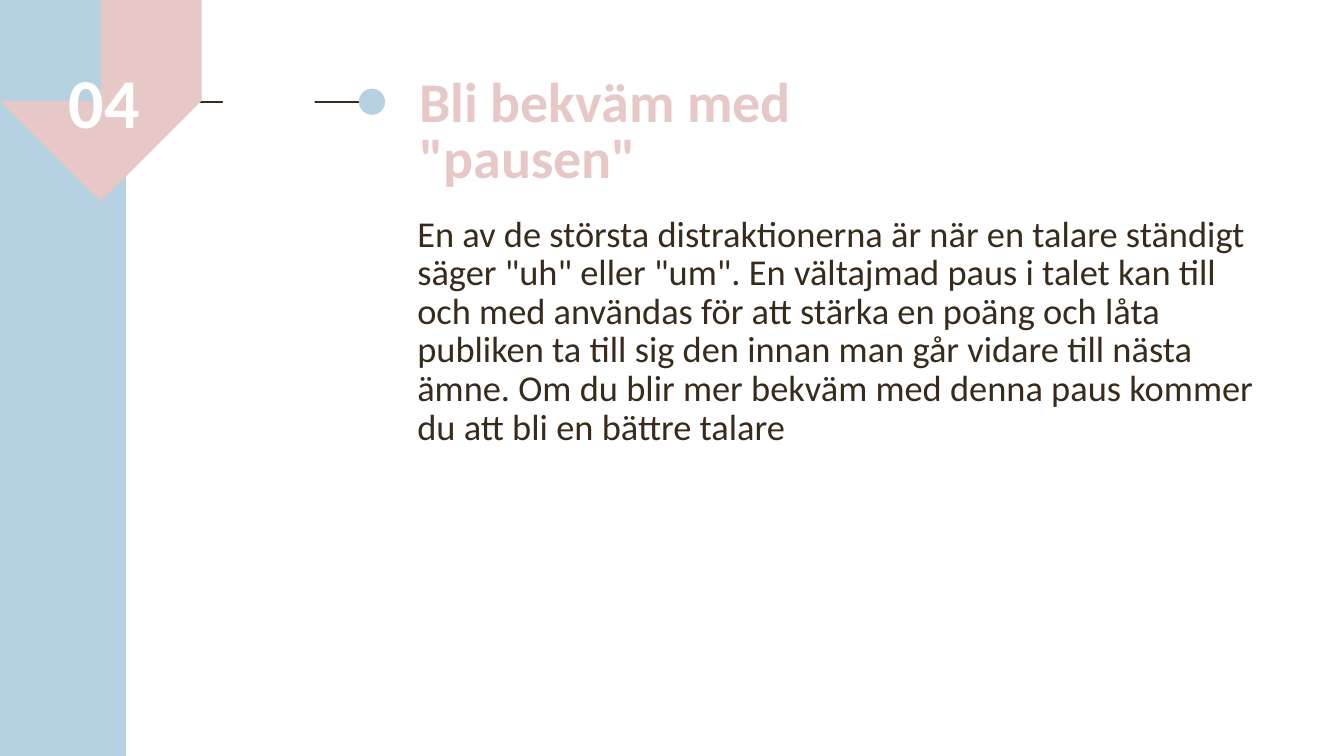
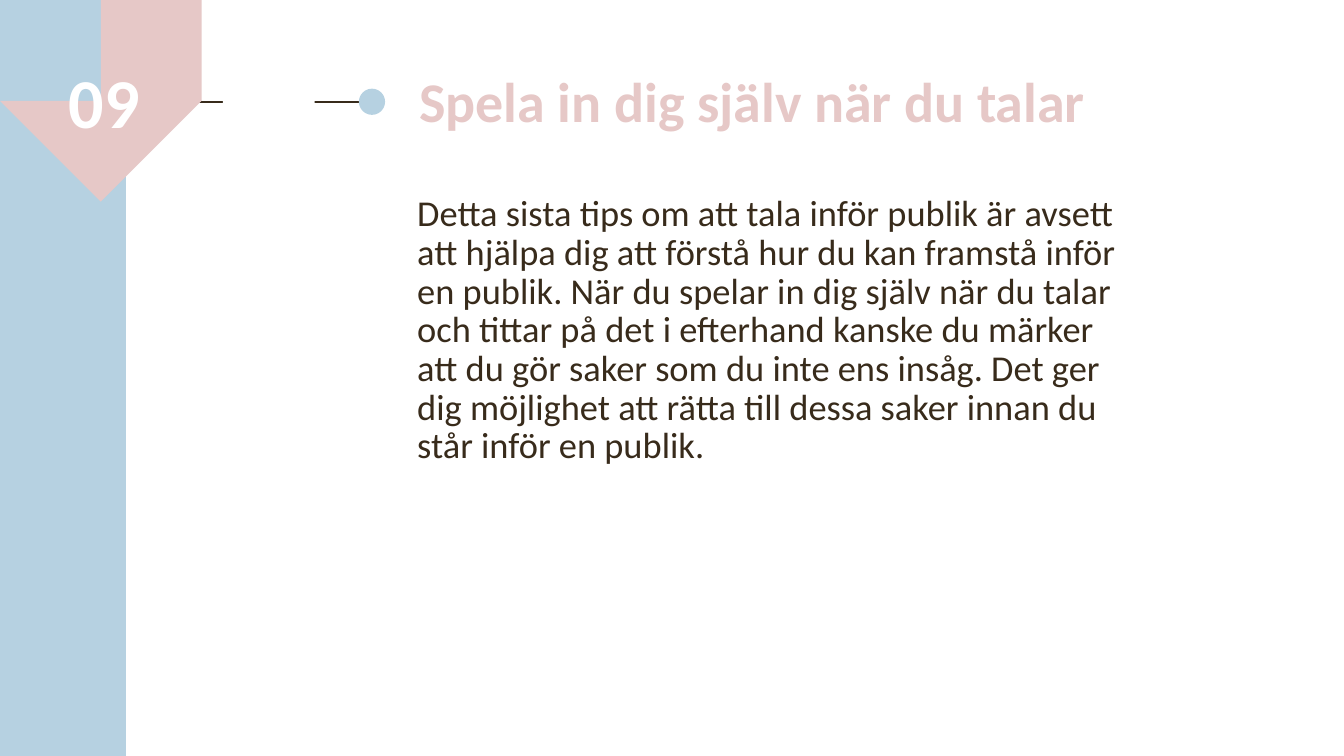
from lxml import etree
from pptx import Presentation
from pptx.dml.color import RGBColor
from pptx.enum.shapes import MSO_CONNECTOR, MSO_SHAPE
from pptx.enum.text import MSO_ANCHOR, PP_ALIGN
from pptx.oxml.ns import qn
from pptx.util import Inches, Pt

BLUE = RGBColor(0xB6, 0xD1, 0xE1)
PINK = RGBColor(0xE6, 0xC8, 0xC7)
BROWN = RGBColor(0x38, 0x2B, 0x1B)
WHITE = RGBColor(0xFF, 0xFF, 0xFF)
FONT = "Calibri"

BADGE_START = (1.2, 0.29)
BADGE_CURVES = [
    ((1.01, 0.23), (0.82, 0.23), (0.67, 0.4)),
    ((0.53, 0.56), (0.39, 0.82), (0.36, 1.03)),
    ((0.29, 1.53), (0.74, 1.75), (1.19, 1.68)),
    ((1.62, 1.61), (1.84, 1.04), (1.71, 0.63)),
    ((1.67, 0.5), (1.55, 0.44), (1.45, 0.39)),
    ((1.37, 0.35), (1.28, 0.31), BADGE_START),
]

TIPS = [
    {
        "number": "04",
        "title": 'Bli bekväm med "pausen"',
        "title_width": 5.58,
        "body": 'En av de största distraktionerna är när en talare ständigt säger "uh" '
                'eller "um". En vältajmad paus i talet kan till och med användas för att '
                "stärka en poäng och låta publiken ta till sig den innan man går vidare "
                "till nästa ämne. Om du blir mer bekväm med denna paus kommer du att bli "
                "en bättre talare",
        "body_box": (4.04, 2.09, 8.71, 2.08),
    },
    {
        "number": "09",
        "title": "Spela in dig själv när du talar",
        "title_width": 7.15,
        "body": "Detta sista tips om att tala inför publik är avsett att hjälpa dig att "
                "förstå hur du kan framstå inför en publik. När du spelar in dig själv när "
                "du talar och tittar på det i efterhand kanske du märker att du gör saker "
                "som du inte ens insåg. Det ger dig möjlighet att rätta till dessa saker "
                "innan du står inför en publik.",
        "body_box": (4.04, 1.89, 7.27, 2.28),
    },
]


def curve_points(start, curves, steps=16):
    """Return points along a chain of cubic curves."""
    points = []
    for c1, c2, end in curves:
        for i in range(1, steps + 1):
            t = i / steps
            u = 1 - t
            points.append(tuple(
                u**3 * a + 3 * u * u * t * b + 3 * u * t * t * c + t**3 * d
                for a, b, c, d in zip(start, c1, c2, end)))
        start = end
    return points


class Deck:
    """Hold the shared style and the current slide."""

    def __init__(self):
        self.prs = Presentation()
        self.prs.slide_width = Inches(13.33)
        self.prs.slide_height = Inches(7.5)
        self.s = None

    def new_slide(self):
        self.s = self.prs.slides.add_slide(self.prs.slide_layouts[6])

    def paint(self, sp, color):
        sp.fill.solid()
        sp.fill.fore_color.rgb = color
        sp.line.fill.background()
        sp.shadow.inherit = False

    def shape(self, kind, box, color):
        sp = self.s.shapes.add_shape(kind, *map(Inches, box))
        self.paint(sp, color)

    def line(self, x1, y1, x2, y2):
        ln = self.s.shapes.add_connector(
            MSO_CONNECTOR.STRAIGHT, *map(Inches, (x1, y1, x2, y2)))
        ln.line.color.rgb = BROWN
        ln.line.width = Pt(1.5)
        etree.SubElement(ln._element.spPr, qn("a:effectLst"))

    def badge(self):
        builder = self.s.shapes.build_freeform(*BADGE_START, scale=Inches(1))
        builder.add_line_segments(curve_points(BADGE_START, BADGE_CURVES), close=True)
        self.paint(builder.convert_to_shape(), PINK)

    def text(self, text, box, size, color, spacing, bold=False, align=PP_ALIGN.LEFT):
        tf = self.s.shapes.add_textbox(*map(Inches, box)).text_frame
        tf.word_wrap = True
        tf.vertical_anchor = MSO_ANCHOR.TOP
        tf.text = text
        p = tf.paragraphs[0]
        p.alignment = align
        p.line_spacing = spacing
        font = p.runs[0].font
        font.name = FONT
        font.size = Pt(size)
        font.bold = bold
        font.color.rgb = color

    def tip(self, number, title, title_width, body, body_box):
        self.new_slide()
        self.line(3.64, 1.01, 1.51, 1.01)
        self.shape(MSO_SHAPE.OVAL, (3.56, 0.88, 0.26, 0.26), BLUE)
        self.shape(MSO_SHAPE.RECTANGLE, (2.21, 0.61, 0.91, 4.56), WHITE)
        self.shape(MSO_SHAPE.RECTANGLE, (0, 0, 1.25, 7.5), BLUE)
        self.text(body, body_box, 26, BROWN, Pt(27.6))
        self.text(title, (4.06, 0.72, title_width, 1.77), 40, PINK, Pt(40.2), bold=True)
        self.badge()
        self.text(number, (0.19, 0.63, 1.69, 0.94), 50, WHITE, 0.9,
                  bold=True, align=PP_ALIGN.CENTER)


def main():
    deck = Deck()
    for tip in TIPS:
        deck.tip(**tip)
    deck.prs.save("out.pptx")


if __name__ == "__main__":
    main()
